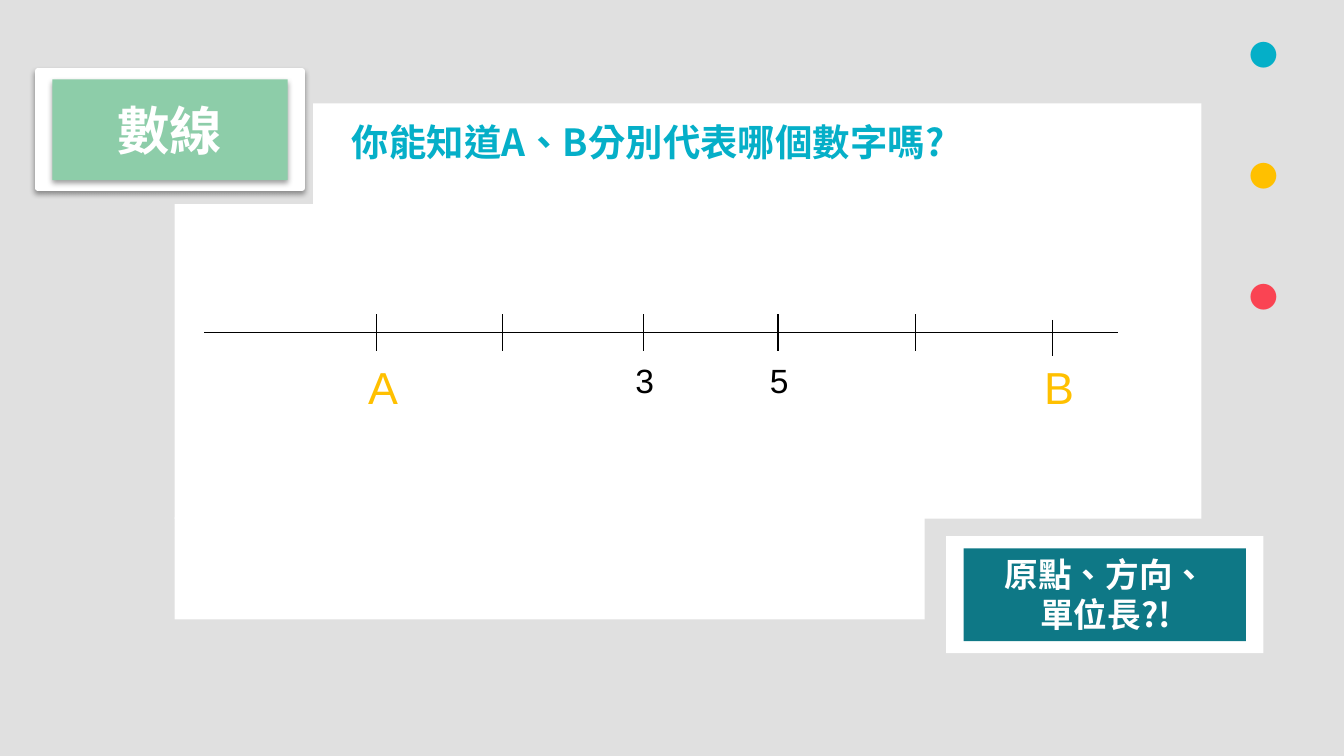
import pptx
import pptx.util
import pptx.dml.color
import pptx.enum.shapes
import pptx.enum.text
import pptx.oxml
import pptx.oxml.ns
from lxml import etree

Inches = pptx.util.Inches
RGB = pptx.dml.color.RGBColor
ALIGN = pptx.enum.text.PP_ALIGN
qn = pptx.oxml.ns.qn

GRAY = RGB(0xE0, 0xE0, 0xE0)
WHITE = RGB(0xFF, 0xFF, 0xFF)
BLACK = RGB(0, 0, 0)
CYAN = RGB(0x05, 0xAF, 0xC8)
AMBER = RGB(0xFF, 0xC0, 0x00)
RED = RGB(0xFA, 0x44, 0x53)
GREEN = RGB(0x8D, 0xCD, 0xA9)
TEAL = RGB(0x0E, 0x78, 0x86)
CJK = "Noto Sans CJK SC"
SHADOW = (
    '<a:effectLst xmlns:a="http://schemas.openxmlformats.org/drawingml/2006/main">'
    '<a:outerShdw blurRad="39370" dist="20320" dir="5400000" rotWithShape="0">'
    '<a:srgbClr val="000000"><a:alpha val="38000"/></a:srgbClr>'
    '</a:outerShdw></a:effectLst>'
)


def add_text(s, box, *runs, size=18, font=CJK, bold=True, align=ALIGN.LEFT):
    """Place one paragraph of (text, colour) runs in a wrapping text box."""
    tf = s.shapes.add_textbox(*map(Inches, box)).text_frame
    tf.word_wrap = True
    p = tf.paragraphs[0]
    p.alignment = align
    for text, color in runs:
        r = p.add_run()
        r.text = text
        r.font.size, r.font.name, r.font.bold = pptx.util.Pt(size), font, bold
        r.font.color.rgb = color
        rpr = r.font._element
        rpr.set("lang", "zh-TW")
        etree.SubElement(rpr, qn("a:ea")).set("typeface", font)


def add_rect(s, box, fill, line=None, shadow=False):
    """Place a filled rectangle with an optional border and soft shadow."""
    sp = s.shapes.add_shape(pptx.enum.shapes.MSO_SHAPE.RECTANGLE, *map(Inches, box))
    sp.fill.solid()
    sp.fill.fore_color.rgb = fill
    if line is None:
        sp.line.fill.background()
    else:
        sp.line.color.rgb, sp.line.width = fill, pptx.util.Pt(line)
    sp.shadow.inherit = False
    if shadow:
        ppr = sp._element.spPr
        ppr.replace(ppr.find(qn("a:effectLst")), pptx.oxml.parse_xml(SHADOW))


def add_line(s, x1, y1, x2, y2):
    """Draw a thin black straight line."""
    kind = pptx.enum.shapes.MSO_CONNECTOR.STRAIGHT
    sp = s.shapes.add_connector(kind, *map(Inches, (x1, y1, x2, y2)))
    sp.line.color.rgb, sp.line.width = BLACK, pptx.util.Pt(0.75)
    etree.SubElement(sp._element.spPr, qn("a:effectLst"))


def add_card(s, box, fill, text, size, pad, text_box, line=None, shadow=False):
    """Draw a white frame, its coloured inner panel and a centred caption."""
    x, y, w, h = box
    dx, dy = pad
    add_rect(s, box, WHITE, line, shadow)
    add_rect(s, (x + dx, y + dy, w - 2 * dx, h - 2 * dy), fill, shadow=shadow)
    tx, ty, tw, th = text_box
    add_text(s, (x + tx, y + ty, tw, th), (text, WHITE), size=size, align=ALIGN.CENTER)


def add_panel(s, box, step, left_notch, right_notch):
    """Draw the white panel with notches at top left and bottom right."""
    x, y, w, h = box
    add_rect(s, (x, y + step, w, h - 2 * step), WHITE)
    add_rect(s, (x + left_notch, y, w - left_notch, step), WHITE)
    add_rect(s, (x, y + h - step - 0.01, w - right_notch, step + 0.01), WHITE)
    add_text(s, (x + 1.22, y + 0.07, 6.04, 0.44),
             ("你能知道A、B分別代表哪個數字嗎?", CYAN), size=20)


def add_number_line(s, box):
    """Draw the axis, its ticks and the labels below them."""
    x, y, w, h = box
    add_line(s, x, y + h / 2, x + w, y + h / 2)
    ticks = [(1.28, "A", AMBER, 24), (2.22, "", BLACK, 18), (3.27, "3", BLACK, 18),
             (4.27, "5", BLACK, 18), (5.29, "", BLACK, 18), (6.31, "B", AMBER, 24)]
    for dx, label, color, size in ticks:
        top = y + (0.04 if label == "B" else 0)
        add_line(s, x + dx, top, x + dx, top + h)
        if label:
            add_text(s, (x + dx - 0.16, y + 0.29, 0.32, 0.34), (label, color), size=size,
                     font="Arial", bold=False, align=ALIGN.CENTER)


def main():
    """Build the number line slide."""
    prs = pptx.Presentation()
    prs.slide_width = Inches(10)
    prs.slide_height = prs.slide_width * 9 // 16
    s = prs.slides.add_slide(prs.slide_layouts[6])
    s.background.fill.solid()
    s.background.fill.fore_color.rgb = GRAY
    add_text(s, (8.23, -0.1, 1.65, 1.01), ("· ", CYAN), ("· ", AMBER), ("·", RED),
             size=54, align=ALIGN.RIGHT)
    add_panel(s, (1.3, 0.77, 7.64, 3.84), 0.75, 1.03, 2.06)
    add_card(s, (0.28, 0.53, 1.97, 0.87), GREEN, "數線", 28, (0.11, 0.06),
             (0.07, 0.15, 1.83, 0.57), line=3, shadow=True)
    add_card(s, (7.04, 3.99, 2.36, 0.87), TEAL, "原點、方向、單位長?!", 18, (0.13, 0.09),
             (0.23, 0.08, 1.91, 0.71))
    add_number_line(s, (1.52, 2.34, 6.8, 0.27))
    prs.save("out.pptx")


if __name__ == "__main__":
    main()
